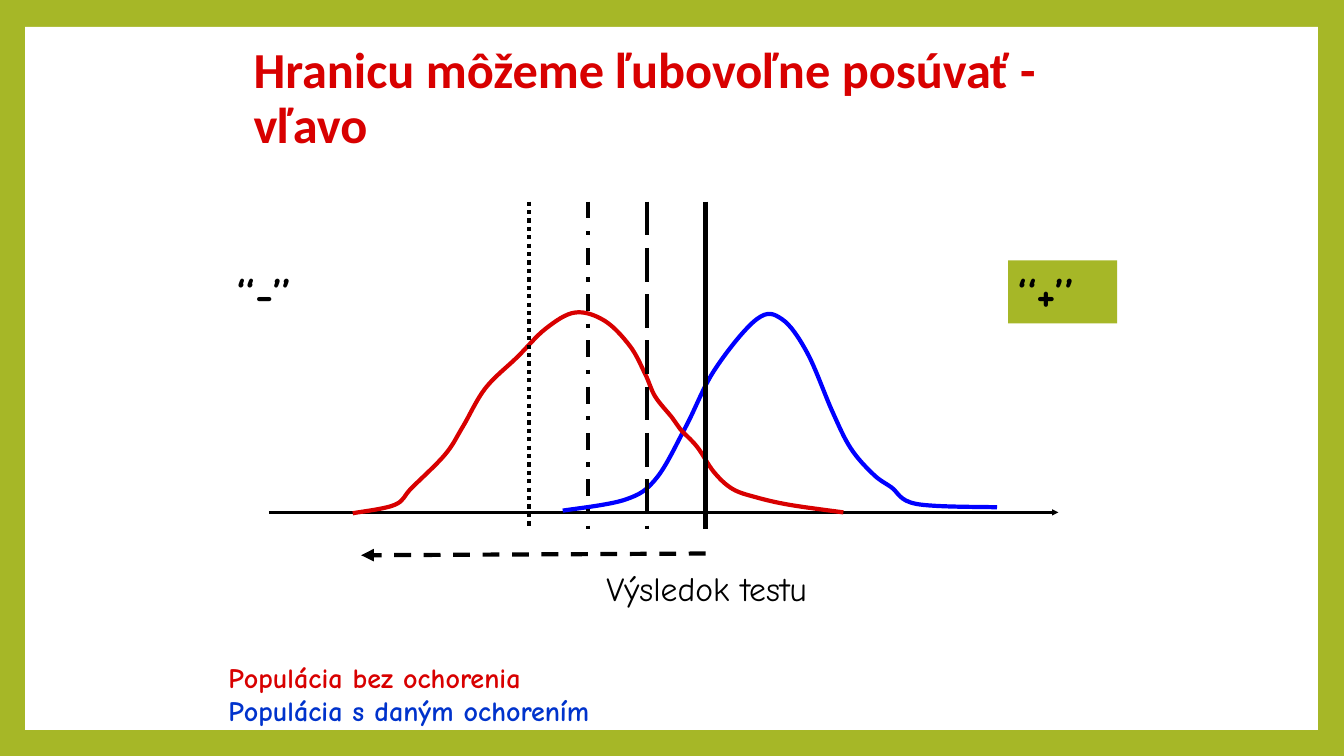
from dataclasses import dataclass
from typing import Optional

from lxml.etree import SubElement
from pptx import Presentation
from pptx.dml.color import RGBColor
from pptx.enum.dml import MSO_LINE as Dash
from pptx.enum.shapes import MSO_CONNECTOR as Conn, MSO_SHAPE as Shp
from pptx.enum.text import MSO_ANCHOR as Anchor, MSO_AUTO_SIZE as Auto
from pptx.oxml.ns import qn
from pptx.util import Inches, Pt

GREEN = RGBColor(0xA6, 0xB7, 0x27)
WHITE = RGBColor(0xFF, 0xFF, 0xFF)
BLACK = RGBColor(0, 0, 0)
RED = RGBColor(0xD8, 0, 0)
BLUE = RGBColor(0, 0, 0xFF)
LEGEND_BLUE = RGBColor(0, 0x33, 0xCC)
COLS, ROWS = 160, 90

Point = tuple[float, float]
Box = tuple[float, float, float, float]


@dataclass
class Label:
    text: str
    box: Box
    size: int
    color: RGBColor = BLACK
    bold: bool = True
    font: str = "Comic Neue"
    fill: Optional[RGBColor] = None
    title: bool = False


@dataclass
class Rule:
    start: Point
    end: Point
    width: float = 3
    dash: Optional[Dash] = None
    arrow: Optional[str] = None


@dataclass
class Curve:
    color: RGBColor
    knots: list[Point]


AXIS = Rule((32, 61), (126, 61), 2.25, arrow="sm")
THRESHOLD_DASHES = [None, Dash.LONG_DASH, Dash.DASH_DOT, Dash.ROUND_DOT]
THRESHOLDS = [Rule((84 - 7 * i, 24), (84 - 7 * i, 63), dash=dash)
              for i, dash in enumerate(THRESHOLD_DASHES)]
SHIFT_ARROW = Rule((84, 65.9), (43, 66.1), dash=Dash.DASH, arrow="med")

CURVES = [
    Curve(BLUE, [(67, 60.8), (74.4, 59.5), (78.1, 57), (81.6, 50.9),
                 (85.1, 44), (90.1, 38), (93.1, 38), (96.1, 42),
                 (99.1, 49), (101.3, 53.4), (104, 56.5), (106.1, 58),
                 (109.1, 60), (118.7, 60.4)]),
    Curve(RED, [(42, 61.1), (47, 60.1), (49, 58.1), (53, 54.1),
                (55.1, 50.8), (57.8, 46.2), (61.6, 42.5), (65, 39.1),
                (68.5, 37.2), (72, 38.2), (75, 41.2), (76.8, 44.5),
                (78, 47.2), (80, 49.7), (81, 51.1), (83, 53.2),
                (85, 56.2), (87.2, 58.2), (90, 59.2), (94, 60.1),
                (100.4, 61)]),
]

LABELS = [
    Label("Výsledok testu", (71, 67, 33, 6), 24, bold=False),
    Label("‘‘-’’", (27, 31, 12, 7.5), 32),
    Label("‘‘+’’", (120, 31, 13, 7.5), 32, fill=GREEN),
    Label("Hranicu môžeme ľubovoľne posúvať - vľavo", (29, 4.35, 102, 15),
          36, RED, font="Calibri", title=True),
    Label("Populácia bez ochorenia", (26, 78, 44.5, 5.2), 20, RED),
    Label("Populácia s daným ochorením", (26, 82, 53, 5.2), 20, LEGEND_BLUE),
]

prs = Presentation()
prs.slide_width, prs.slide_height = Inches(13.33), Inches(7.5)


def place(*lengths: float) -> list[int]:
    units = (prs.slide_width / COLS, prs.slide_height / ROWS)
    return [round(n * units[i % 2]) for i, n in enumerate(lengths)]


def add_frame(slide) -> None:
    sp = slide.shapes.add_shape(Shp.RECTANGLE, *place(3, 3.2, 153.9, 83.7))
    sp.shadow.inherit = False
    sp.fill.solid()
    sp.fill.fore_color.rgb = WHITE
    sp.line.fill.background()


def add_rule(slide, rule: Rule) -> None:
    cx = slide.shapes.add_connector(Conn.STRAIGHT, *place(*rule.start, *rule.end))
    cx.line.color.rgb = BLACK
    cx.line.width = Pt(rule.width)
    if rule.dash is not None:
        cx.line.dash_style = rule.dash
    if rule.arrow is not None:
        ln = cx._element.spPr.find(qn("a:ln"))
        SubElement(ln, qn("a:tailEnd"), type="triangle", w=rule.arrow, len=rule.arrow)
    SubElement(cx._element.spPr, qn("a:effectLst"))


def smooth_outline(sp) -> None:
    knots = [(int(pt.get("x")), int(pt.get("y")))
             for pt in sp._element.iter(qn("a:pt"))]
    padded = [knots[0], *knots, knots[-1]]
    segments = list(sp._element.iter(qn("a:lnTo")))
    for segment, before, a, b, after in zip(
            segments, padded, padded[1:], padded[2:], padded[3:]):
        leave = [q + (r - p) / 6 for p, q, r in zip(before, a, b)]
        arrive = [q - (r - p) / 6 for p, q, r in zip(a, b, after)]
        bezier = SubElement(segment.getparent(), qn("a:cubicBezTo"))
        for x, y in (leave, arrive, b):
            SubElement(bezier, qn("a:pt"), x=str(round(x)), y=str(round(y)))
        segment.getparent().remove(segment)


def add_curve(slide, curve: Curve) -> None:
    start, *rest = [place(*knot) for knot in curve.knots]
    builder = slide.shapes.build_freeform(*start)
    builder.add_line_segments(rest, close=False)
    sp = builder.convert_to_shape()
    smooth_outline(sp)
    sp.shadow.inherit = False
    sp.fill.background()
    sp.line.color.rgb = curve.color
    sp.line.width = Pt(3)


def add_label(slide, label: Label) -> None:
    sp = slide.shapes.add_textbox(*place(*label.box))
    if label.fill is not None:
        sp.fill.solid()
        sp.fill.fore_color.rgb = label.fill
    tf = sp.text_frame
    tf.word_wrap = True
    tf.auto_size = Auto.NONE if label.title else Auto.SHAPE_TO_FIT_TEXT
    tf.vertical_anchor = Anchor.MIDDLE if label.title else Anchor.TOP
    p = tf.paragraphs[0]
    p.text = label.text
    p.font.name = label.font
    p.font.size = Pt(label.size)
    p.font.bold = label.bold
    p.font.color.rgb = label.color
    if label.title:
        p.line_spacing = 0.9


def main() -> None:
    slide = prs.slides.add_slide(prs.slide_layouts[6])
    slide.background.fill.solid()
    slide.background.fill.fore_color.rgb = GREEN
    add_frame(slide)
    add_rule(slide, AXIS)
    for curve in CURVES:
        add_curve(slide, curve)
    for rule in [*THRESHOLDS, SHIFT_ARROW]:
        add_rule(slide, rule)
    for label in LABELS:
        add_label(slide, label)
    prs.save("out.pptx")


if __name__ == "__main__":
    main()
